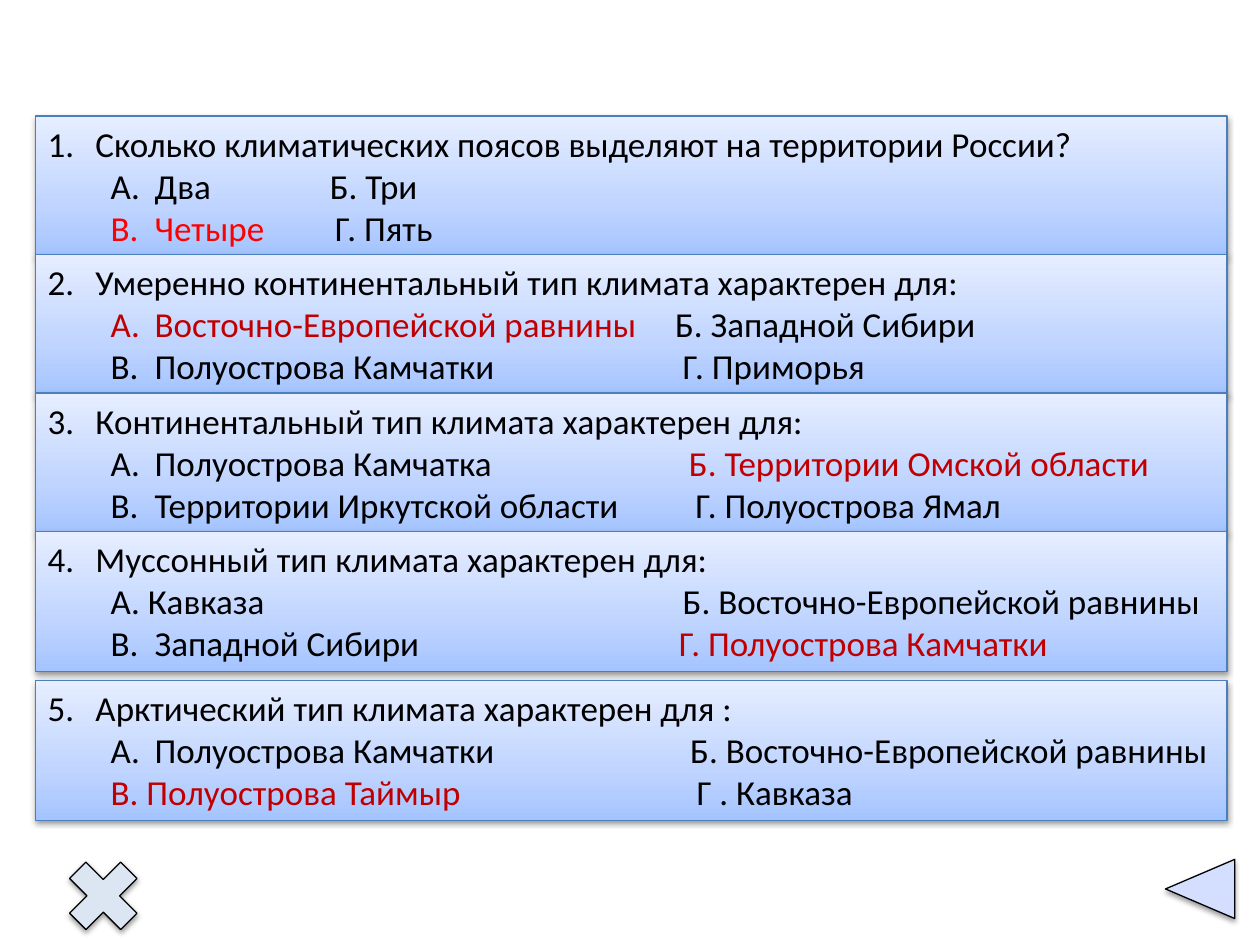
from lxml.etree import SubElement
from pptx import Presentation
from pptx.dml.color import RGBColor
from pptx.enum.shapes import MSO_SHAPE as Shape
from pptx.enum.text import MSO_ANCHOR, MSO_AUTO_SIZE, PP_ALIGN
from pptx.oxml.ns import qn
from pptx.util import Inches, Pt

BLACK = RGBColor(0, 0, 0)
RED = RGBColor(0xFF, 0, 0)
DARK_RED = RGBColor(0xC0, 0, 0)
BORDER = RGBColor(0x4B, 0x7E, 0xBC)
PALE_BLUE = RGBColor(0xDC, 0xE6, 0xF2)
CARD_STOPS = [(0, RGBColor(0xA4, 0xC4, 0xFF)), (35, RGBColor(0xBF, 0xD4, 0xFF)),
              (100, RGBColor(0xE6, 0xEE, 0xFF))]
ARROW_STOPS = [(53, RGBColor(0xD4, 0xDE, 0xFF)), (83, RGBColor(0xD4, 0xDE, 0xFF)),
               (100, RGBColor(0xB9, 0xCD, 0xE5)), (100, RGBColor(0x96, 0xAB, 0x94))]

# Card grid in inches: equal rows, with a small gap before the last one
CARD_LEFT, CARD_TOP, CARD_WIDTH, CARD_HEIGHT = 0.28, 0.92, 9.46, 1.11
ROW_STEP, LAST_GAP = 1.1, 0.08
NUMBER_INDENT, ANSWER_LABEL, ANSWER_TEXT = 0.38, 0.5, 0.85

# Question, then answer rows: left, right, right column, correct side, its colour
QUESTIONS = [
    ("Сколько климатических поясов выделяют на территории России?",
     [("А.\tДва", "Б. Три", 2.24, None, None),
      ("В.\tЧетыре", "Г. Пять", 2.28, 0, RED)]),
    ("Умеренно континентальный тип климата характерен для:",
     [("А.\tВосточно-Европейской равнины", "Б. Западной Сибири", 4.98, 0, DARK_RED),
      ("В.\tПолуострова Камчатки", "Г. Приморья", 5.04, None, None)]),
    ("Континентальный тип климата характерен для:",
     [("А.\tПолуострова Камчатка", "Б. Территории Омской области", 5.09, 1, DARK_RED),
      ("В.\tТерритории Иркутской области", "Г. Полуострова Ямал", 5.14, None, None)]),
    ("Муссонный тип климата характерен для:",
     [("А. Кавказа", "Б. Восточно-Европейской равнины", 5.04, None, None),
      ("В.\tЗападной Сибири", "Г. Полуострова Камчатки", 5.01, 1, DARK_RED)]),
    ("Арктический тип климата характерен для :",
     [("А.\tПолуострова Камчатки", "Б. Восточно-Европейской равнины", 5.1, None, None),
      ("В. Полуострова Таймыр", "Г . Кавказа", 5.15, 0, DARK_RED)]),
]


def add_panel(shapes, kind, box, border):
    """Add an outlined shape with a soft shadow below it."""
    panel = shapes.add_shape(kind, *(Inches(length) for length in box))
    panel.line.color.rgb = border
    panel.line.width = Pt(0.75)
    panel.shadow.inherit = False
    effects = panel._element.spPr.find(qn("a:effectLst"))
    shadow = SubElement(effects, qn("a:outerShdw"), blurRad=str(Pt(3.1)),
                        dist=str(Pt(1.6)), dir="5400000", rotWithShape="0")
    tint = SubElement(shadow, qn("a:srgbClr"), val=str(BLACK))
    SubElement(tint, qn("a:alpha"), val="38000")
    return panel


def fill_gradient(panel, stops, angle):
    panel.fill.gradient()
    panel.fill.gradient_angle = angle
    stop_list = panel._element.spPr.find(qn("a:gradFill")).find(qn("a:gsLst"))
    for old_stop in list(stop_list):
        stop_list.remove(old_stop)
    for share, color in stops:
        stop = SubElement(stop_list, qn("a:gs"), pos=str(share * 1000))
        SubElement(stop, qn("a:srgbClr"), val=str(color))


def add_run(paragraph, text, color=BLACK):
    run = paragraph.add_run()
    run.text = text
    run.font.size = Pt(20)
    run.font.name = "Calibri"
    run.font.color.rgb = color


def add_answers(frame, left, right, column, correct, color):
    """Add one row of two answers, aligned by tab stops."""
    row = frame.add_paragraph()
    row.alignment = PP_ALIGN.LEFT
    tabs = SubElement(row._p.get_or_add_pPr(), qn("a:tabLst"))
    label_stops = [ANSWER_LABEL, ANSWER_TEXT] if "\t" in left else [ANSWER_LABEL]
    for stop in label_stops + [column]:
        SubElement(tabs, qn("a:tab"), pos=str(Inches(stop)), algn="l")
    for side, answer in enumerate((left, right)):
        add_run(row, "\t" + answer, color if side == correct else BLACK)


def add_question_card(shapes, box, number, question, answer_rows):
    card = add_panel(shapes, Shape.RECTANGLE, box, BORDER)
    fill_gradient(card, CARD_STOPS, 90)
    frame = card.text_frame
    frame.word_wrap = True
    frame.auto_size = MSO_AUTO_SIZE.SHAPE_TO_FIT_TEXT
    frame.vertical_anchor = MSO_ANCHOR.TOP
    heading = frame.paragraphs[0]
    heading.alignment = PP_ALIGN.LEFT
    properties = heading._p.get_or_add_pPr()
    properties.set("marL", str(Inches(NUMBER_INDENT)))
    properties.set("indent", str(-Inches(NUMBER_INDENT)))
    SubElement(properties, qn("a:buAutoNum"), type="arabicPeriod", startAt=str(number))
    add_run(heading, question)
    for answers in answer_rows:
        add_answers(frame, *answers)


def add_quiz(shapes):
    quiz = shapes.add_group_shape().shapes
    for index, (question, answer_rows) in enumerate(QUESTIONS):
        gap = LAST_GAP if index == len(QUESTIONS) - 1 else 0
        box = (CARD_LEFT, CARD_TOP + index * ROW_STEP + gap, CARD_WIDTH, CARD_HEIGHT)
        add_question_card(quiz, box, index + 1, question, answer_rows)


def add_navigation(shapes):
    # Close button
    close = add_panel(shapes, Shape.MATH_MULTIPLY, (0.43, 6.72, 0.78, 0.78), BLACK)
    close.fill.solid()
    close.fill.fore_color.rgb = PALE_BLUE
    # Back arrow: a pentagon sharpened to a triangle and turned left
    back = add_panel(shapes, Shape.PENTAGON, (9.25, 6.82, 0.55, 0.47), BLACK)
    back.adjustments[0] = 1.17
    back.rotation = 180
    fill_gradient(back, ARROW_STOPS, 315)


def main():
    deck = Presentation()
    deck.slide_width, deck.slide_height = Inches(10), Inches(7.5)
    slide = deck.slides.add_slide(deck.slide_layouts[6])
    add_navigation(slide.shapes)
    add_quiz(slide.shapes)
    deck.save("out.pptx")


if __name__ == "__main__":
    main()
